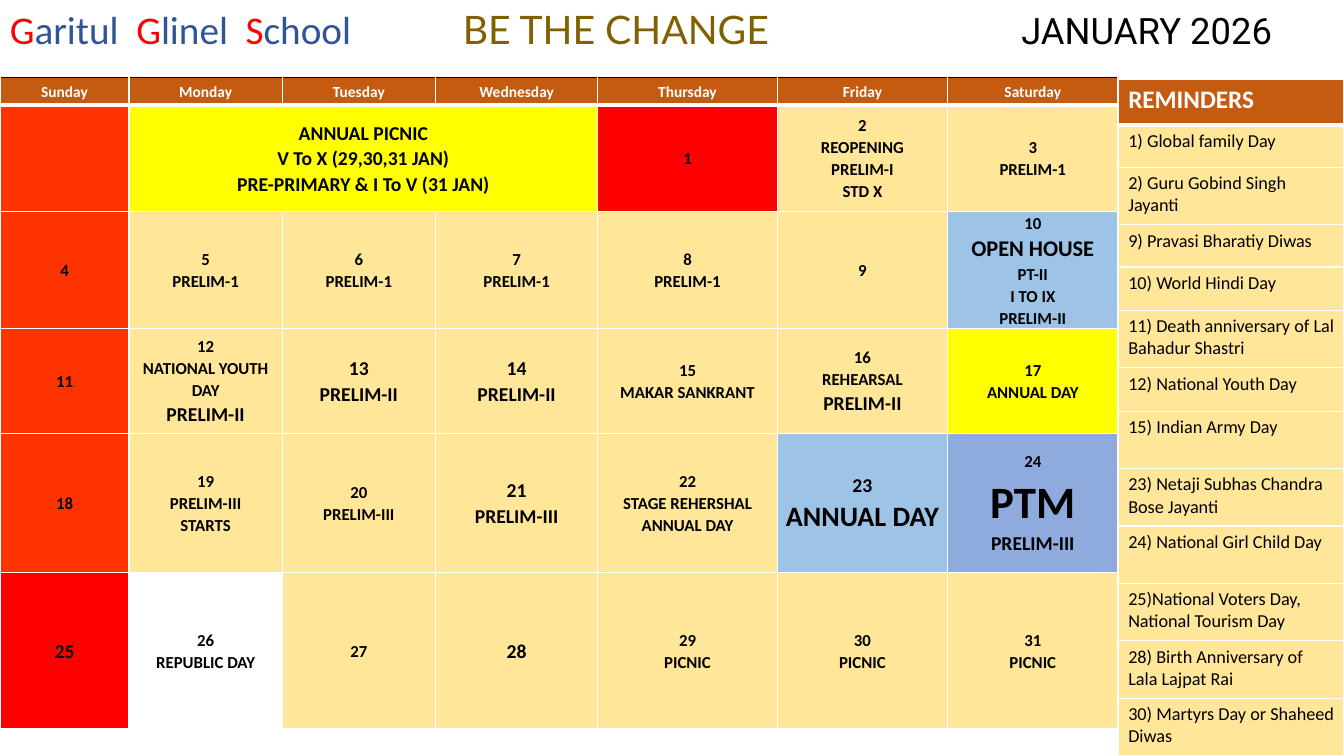
from dataclasses import dataclass
from itertools import zip_longest

from lxml import etree
from pptx import Presentation
from pptx.dml.color import RGBColor
from pptx.enum.shapes import MSO_SHAPE
from pptx.enum.text import MSO_ANCHOR, MSO_AUTO_SIZE, PP_ALIGN
from pptx.oxml.ns import qn
from pptx.util import Inches, Pt

LEFT, CENTER = PP_ALIGN.LEFT, PP_ALIGN.CENTER
TOP, MIDDLE = MSO_ANCHOR.TOP, MSO_ANCHOR.MIDDLE
NO_FIT = MSO_AUTO_SIZE.NONE
RECTANGLE = MSO_SHAPE.RECTANGLE


@dataclass(frozen=True)
class Theme:
    sand: str = "FFE699"
    rust: str = "C55A11"
    sunday: str = "FF3300"
    red: str = "FF0000"
    yellow: str = "FFFF00"
    sky: str = "9DC3E6"
    periwinkle: str = "8FAADC"
    white: str = "FFFFFF"
    black: str = "000000"
    soft_black: str = "0D0D0D"
    navy: str = "2F5597"
    olive: str = "806000"
    font: str = "Calibri"
    motto_font: str = "Lato"
    month_font: str = "Roboto"
    heading: int = 28
    month: int = 26
    panel_heading: int = 18
    weekday: int = 11
    day: int = 12
    reminder: int = 13
    note: int = 14
    event: int = 16
    big_event: int = 20
    huge_event: int = 32


THEME = Theme()


@dataclass(frozen=True)
class Day:
    """One calendar cell; lines without a size take the usual day size."""
    text: str
    fill: str = THEME.sand
    sizes: tuple = ()
    ink: str = THEME.black


NOTE = THEME.note
WEEKDAYS = ["Sunday", "Monday", "Tuesday", "Wednesday", "Thursday", "Friday", "Saturday"]
WEEKS = [
    [Day("", THEME.sunday),
     Day("ANNUAL PICNIC\nV To X (29,30,31 JAN)\nPRE-PRIMARY & I To V (31 JAN)",
         THEME.yellow, (NOTE, NOTE, NOTE)),
     Day(""), Day(""), Day("1", THEME.red),
     Day("2\nREOPENING\nPRELIM-I\nSTD X"), Day("3\nPRELIM-1")],
    [Day("4", THEME.sunday), Day("5\nPRELIM-1"), Day("6\nPRELIM-1"),
     Day("7\nPRELIM-1"), Day("8\nPRELIM-1"), Day("9"),
     Day("10\nOPEN HOUSE\nPT-II\nI TO IX\nPRELIM-II", THEME.sky, (THEME.day, THEME.event))],
    [Day("11", THEME.sunday),
     Day("12\nNATIONAL YOUTH DAY\nPRELIM-II", sizes=(THEME.day, THEME.day, NOTE)),
     Day("13\nPRELIM-II", sizes=(NOTE, NOTE)), Day("14\nPRELIM-II", sizes=(NOTE, NOTE)),
     Day("15\nMAKAR SANKRANT"),
     Day("16\nREHEARSAL\nPRELIM-II", sizes=(THEME.day, THEME.day, NOTE)),
     Day("17\nANNUAL DAY", THEME.yellow)],
    [Day("18", THEME.sunday), Day("19\nPRELIM-III\nSTARTS"), Day("20\nPRELIM-III"),
     Day("21\nPRELIM-III", sizes=(NOTE, NOTE)), Day("22\nSTAGE REHERSHAL ANNUAL DAY"),
     Day("23\nANNUAL DAY", THEME.sky, (NOTE, THEME.big_event)),
     Day("24\nPTM\nPRELIM-III", THEME.periwinkle, (THEME.day, THEME.huge_event, NOTE))],
    [Day("25", THEME.red, (NOTE,), THEME.soft_black), Day("26\nREPUBLIC DAY", THEME.white),
     Day("27"), Day("28", sizes=(NOTE,)),
     Day("29\nPICNIC"), Day("30\nPICNIC"), Day("31\nPICNIC")],
]
REMINDERS = [
    ("1) Global family Day", 0.42),
    ("2) Guru Gobind Singh Jayanti", 0.57),
    ("9) Pravasi Bharatiy Diwas", 0.42),
    ("10) World Hindi Day", 0.43),
    ("11) Death anniversary of Lal Bahadur Shastri", 0.57),
    ("12) National Youth Day", 0.43),
    ("15) Indian Army Day", 0.57),
    ("23) Netaji Subhas Chandra Bose Jayanti", 0.57),
    ("24) National Girl Child Day", 0.57),
    ("25)National Voters Day, National Tourism Day", 0.57),
    ("28) Birth Anniversary of Lala Lajpat Rai", 0.57),
    ("30) Martyrs Day or Shaheed Diwas", 0.57),
]


def set_all(target, values):
    for name, value in values.items():
        setattr(target, name, value)


def add_span(para, text, size, color, font=THEME.font, bold=False):
    span = para.add_run()
    span.text = text
    set_all(span.font, {"size": Pt(size), "name": font, "bold": bold})
    span.font.color.rgb = RGBColor.from_string(color)
    return span


def set_borders(cell, top=THEME.white, bottom_width=1):
    """Draw the four cell edges; must run before the cell gets its fill."""
    properties = cell._tc.get_or_add_tcPr()
    edges = [("L", THEME.white, 1), ("R", THEME.white, 1),
             ("T", top, 1), ("B", THEME.white, bottom_width)]
    for side, color, width in edges:
        line = etree.SubElement(properties, qn(f"a:ln{side}"), w=str(Pt(width)))
        fill = etree.SubElement(line, qn("a:solidFill"))
        etree.SubElement(fill, qn("a:srgbClr"), val=color)


def paint(cell, color):
    cell.fill.solid()
    cell.fill.fore_color.rgb = RGBColor.from_string(color)


def add_grid(page, left, top, widths, heights):
    table = page.shapes.add_table(len(heights), len(widths), Inches(left), Inches(top),
                                  Inches(sum(widths)), Inches(sum(heights))).table
    for column, width in zip(table.columns, widths):
        column.width = Inches(width)
    for row, height in zip(table.rows, heights):
        row.height = Inches(height)
    return table


def fill_day(cell, day):
    set_all(cell, {"margin_left": Inches(0.07), "margin_right": Inches(0.07),
                   "margin_top": 0, "margin_bottom": 0, "vertical_anchor": MIDDLE})
    paint(cell, day.fill)
    if not day.text:
        return
    lines = day.text.split("\n")
    for index, (line, size) in enumerate(zip_longest(lines, day.sizes, fillvalue=THEME.day)):
        box = cell.text_frame
        para = box.add_paragraph() if index else box.paragraphs[0]
        set_all(para, {"alignment": CENTER, "line_spacing": 1.07})
        add_span(para, line, size, day.ink, bold=True)


def add_calendar(page, left, top):
    table = add_grid(page, left, top, [1.28, 1.52, 1.52, 1.61, 1.78, 1.69, 1.69],
                     [0.27, 1.06, 1.15, 1.04, 1.38, 1.55])
    header = [Day(name, THEME.rust, (THEME.weekday,), THEME.white) for name in WEEKDAYS]
    for row, week in enumerate([header] + WEEKS):
        for column, day in enumerate(week):
            cell = table.cell(row, column)
            if row == 0:
                set_borders(cell, THEME.black, 3)
            else:
                set_borders(cell)
            fill_day(cell, day)
    table.cell(1, 1).merge(table.cell(1, 3))


def add_reminders(page, left, top):
    entries = [("REMINDERS", 0.45)] + REMINDERS
    table = add_grid(page, left, top, [2.24], [height for _, height in entries])
    for row, (text, _) in enumerate(entries):
        cell = table.cell(row, 0)
        heading = row == 0
        set_borders(cell, bottom_width=3 if heading else 1)
        paint(cell, THEME.rust if heading else THEME.sand)
        add_span(cell.text_frame.paragraphs[0], text,
                 THEME.panel_heading if heading else THEME.reminder,
                 THEME.white if heading else THEME.black, bold=heading)


def place(shape, left, top, width, height):
    """Position a text shape and return its first paragraph."""
    set_all(shape, {"left": Inches(left), "top": Inches(top),
                    "width": Inches(width), "height": Inches(height)})
    set_all(shape.text_frame, {"word_wrap": True, "auto_size": NO_FIT, "vertical_anchor": TOP})
    return shape.text_frame.paragraphs[0]


def add_banner(page, left, top):
    motto = place(page.shapes.title, left + 4.49, top, 4.39, 0.57)
    motto.alignment = LEFT
    add_span(motto, "BE THE CHANGE", THEME.heading, THEME.olive, THEME.motto_font)

    month_box = page.shapes.add_shape(RECTANGLE, 0, 0, 0, 0)
    month_box.shadow.inherit = False
    paint(month_box, THEME.white)
    month_box.line.fill.background()
    month = place(month_box, left + 9.41, top, 3.93, 0.55)
    set_all(month, {"alignment": CENTER, "line_spacing": 1.07, "space_after": Pt(8)})
    add_span(month, "JANUARY 2026", THEME.month, THEME.black, THEME.month_font)

    school = place(page.shapes.add_textbox(0, 0, 0, 0), left, top, 4.4, 0.64)
    for index, word in enumerate(["Garitul", "Glinel", "School"]):
        if index:
            gap = add_span(school, " ", THEME.heading, THEME.navy)
            gap.font._element.set("spc", "630")
        add_span(school, word[0], THEME.heading, THEME.red)
        add_span(school, word[1:], THEME.heading, THEME.navy)


def main():
    deck = Presentation()
    set_all(deck, {"slide_width": Inches(13.33), "slide_height": Inches(7.5)})
    page = deck.slides.add_slide(deck.slide_layouts[5])
    add_banner(page, 0, 0)
    add_calendar(page, 0, 0.77)
    add_reminders(page, 11.09, 0.79)
    deck.save("out.pptx")


if __name__ == "__main__":
    main()
